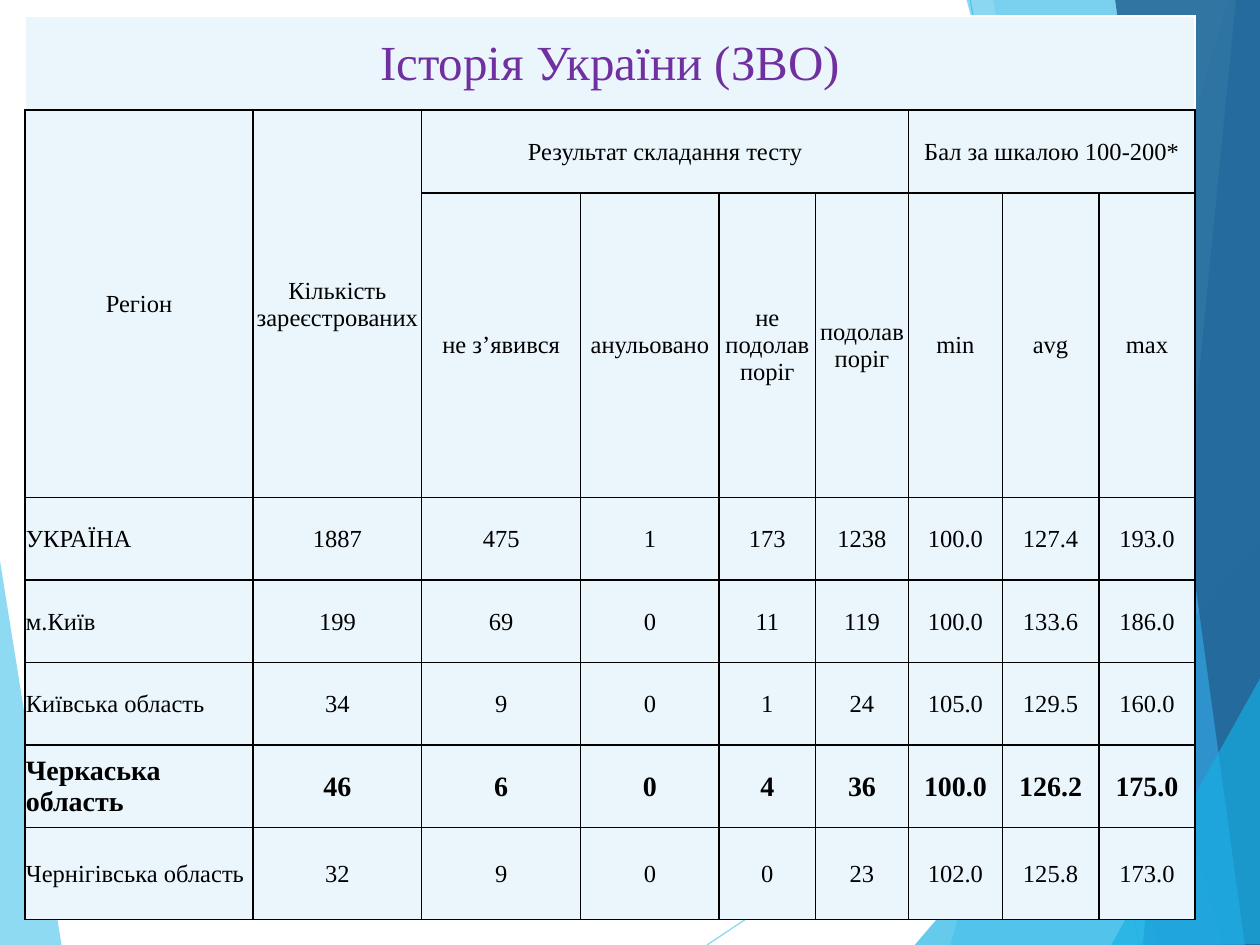
from lxml import etree
from pptx import Presentation
from pptx.dml.color import RGBColor
from pptx.enum import shapes, text
from pptx.oxml.ns import qn
from pptx.util import Pt

FONT = "Times New Roman"
BLACK, WHITE, PURPLE, PALE = "000000", "FFFFFF", "7030A0", "EAF6FC"
SKY, CYAN, BLUE, NAVY = "5FCBEF", "17B0E4", "2E83C3", "226292"

# Outline, colour, opacity in percent; from back to front
LEFT_WEDGE = [([(-0.7, 316), (35.3, 540.5), (-0.7, 540)], SKY, 70)]
RIGHT_FACETS = [
    ([(702, 0), (543, 540), (721, 540.5), (721, 0.5)], SKY, 36),
    ([(567.5, -0.5), (661.7, 540), (721, 540), (721, -0.5)], SKY, 20),
    ([(522.7, 540), (720, 309), (721, 540)], CYAN, 66),
    ([(552.2, -0.5), (698.4, 540), (721, 539.5), (721, -0.5)], CYAN, 50),
    ([(706.3, -0.5), (653, 540), (721, 540), (720, -0.5)], BLUE, 70),
    ([(637.2, -0.5), (711.4, 540), (721.4, 540), (720, -0.5)], NAVY, 82),
    ([(635, 540), (721.4, 385.2), (721.4, 539.5)], CYAN, 66),
]
RAYS = [((404, 540), (720.7, 329)), ((554.4, 0), (651, 540))]

COLUMNS = [130.5, 96.3, 90.9, 79.1, 55.1, 53.1, 53.7, 55.1, 55.1]
ROWS = [53.8, 47.2, 174, 47.2, 47.2, 47.2, 47.2, 52.4]
TITLE = "Історія України (ЗВО)"
GROUPS = ["Регіон", "Кількість зареєстрованих", "Результат складання тесту",
          None, None, None, "Бал за шкалою 100-200*", None, None]
MEASURES = [None, None, "не з’явився", "анульовано", "не подолав поріг",
            "подолав поріг", "min", "avg", "max"]
REGIONS = [
    ["УКРАЇНА", "1887", "475", "1", "173", "1238", "100.0", "127.4", "193.0"],
    ["м.Київ", "199", "69", "0", "11", "119", "100.0", "133.6", "186.0"],
    ["Київська область", "34", "9", "0", "1", "24", "105.0", "129.5", "160.0"],
    ["Черкаська область", "46", "6", "0", "4", "36", "100.0", "126.2", "175.0"],
    ["Чернігівська область", "32", "9", "0", "0", "23", "102.0", "125.8", "173.0"],
]
HIGHLIGHT = "Черкаська область"
MERGES = [((0, 0), (0, 8)), ((1, 0), (2, 0)), ((1, 1), (2, 1)),
          ((1, 2), (1, 5)), ((1, 6), (1, 8))]


def color(value):
    return RGBColor.from_string(value)


def set_opacity(filled, percent):
    for tint in filled.iter(qn("a:srgbClr")):
        etree.SubElement(tint, qn("a:alpha"), val=str(percent * 1000))


def add_facets(page, left, top, facets):
    for outline, tint, opacity in facets:
        points = [(Pt(left + x), Pt(top + y)) for x, y in outline]
        builder = page.shapes.build_freeform(*points[0])
        builder.add_line_segments(points[1:], close=True)
        facet = builder.convert_to_shape()
        facet.shadow.inherit = False
        facet.fill.solid()
        facet.fill.fore_color.rgb = color(tint)
        set_opacity(facet.fill._xPr, opacity)
        facet.line.fill.background()


def add_rays(page, left, top):
    for (x1, y1), (x2, y2) in RAYS:
        ray = page.shapes.add_connector(
            shapes.MSO_CONNECTOR.STRAIGHT,
            Pt(left + x1), Pt(top + y1), Pt(left + x2), Pt(top + y2))
        ray.line.color.rgb = color(SKY)
        ray.line.width = Pt(0.75)
        properties = ray._element.spPr
        set_opacity(properties, 70)
        etree.SubElement(properties, qn("a:effectLst"))


def add_borders(cell, sides):
    """Draw 1 pt borders; sides maps L, R, T, B in that order to colours."""
    properties = cell._tc.get_or_add_tcPr()
    for side, tint in sides.items():
        border = etree.SubElement(properties, qn(f"a:ln{side}"), w=str(Pt(1)))
        fill = etree.SubElement(border, qn("a:solidFill"))
        etree.SubElement(fill, qn("a:srgbClr"), val=tint)


def write_cell(cell, words, size, tint, bold, align):
    para = cell.text_frame.paragraphs[0]
    para.alignment = align
    span = para.add_run()
    span.text = words
    span.font.name = FONT
    span.font.size = Pt(size)
    span.font.bold = bold
    span.font.color.rgb = color(tint)


def add_results_table(page, left, top):
    frame = page.shapes.add_table(len(ROWS), len(COLUMNS), Pt(left), Pt(top),
                                  Pt(sum(COLUMNS)), Pt(sum(ROWS)))
    table = frame.table
    table.first_row = table.horz_banding = False
    for column, width in zip(table.columns, COLUMNS):
        column.width = Pt(width)
    for row, height in zip(table.rows, ROWS):
        row.height = Pt(height)

    title_row = [TITLE] + [None] * (len(COLUMNS) - 1)
    for r, words_row in enumerate([title_row, GROUPS, MEASURES, *REGIONS]):
        is_title = r == 0
        bold = words_row[0] == HIGHLIGHT
        size = 28 if is_title else 16 if bold else 14
        edge = WHITE if is_title else BLACK
        sides = {"L": edge, "R": edge, "T": edge, "B": BLACK}
        for c, words in enumerate(words_row):
            cell = table.cell(r, c)
            cell.margin_left = cell.margin_right = cell.margin_top = Pt(0.6)
            cell.margin_bottom = 0
            cell.vertical_anchor = text.MSO_ANCHOR.MIDDLE
            add_borders(cell, sides)
            cell.fill.solid()
            cell.fill.fore_color.rgb = color(PALE)
            if words:
                is_name = r > 2 and c == 0
                align = text.PP_ALIGN.LEFT if is_name else text.PP_ALIGN.CENTER
                write_cell(cell, words, size, PURPLE if is_title else BLACK,
                           bold, align)
    for first, last in MERGES:
        table.cell(*first).merge(table.cell(*last))


def main():
    deck = Presentation()
    deck.slide_width, deck.slide_height = Pt(720), Pt(540)
    page = deck.slides.add_slide(deck.slide_layouts[6])
    add_facets(page, 0, 0, LEFT_WEDGE)
    add_rays(page, 0, 0)
    add_facets(page, 0, 0, RIGHT_FACETS)
    add_results_table(page, 14.2, 9.2)
    deck.save("out.pptx")


if __name__ == "__main__":
    main()
